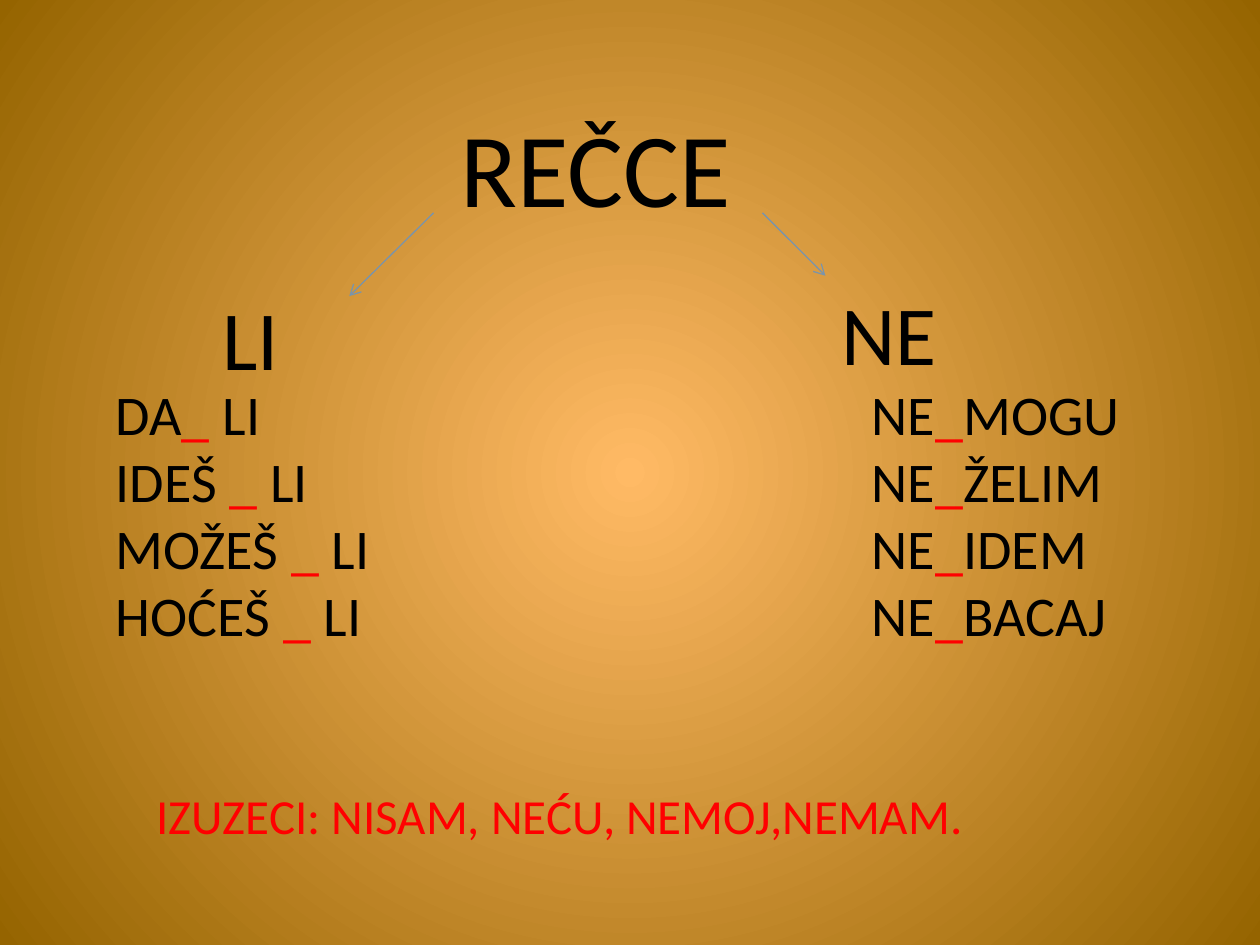
import pptx
import pptx.dml.color
import pptx.enum.shapes
import pptx.enum.text
import pptx.oxml
import pptx.oxml.ns
import pptx.util
from dataclasses import dataclass

Cm = pptx.util.Cm
RGB = pptx.dml.color.RGBColor.from_string
ALIGN = pptx.enum.text.PP_ALIGN


@dataclass(frozen=True)
class Theme:
    font: str = "Calibri"
    text: str = "000000"
    accent: str = "FF0000"
    arrow: str = "7A94AA"
    glow: str = "FFBA65"
    edge: str = "956400"
    title: int = 60
    heading: int = 48
    words: int = 32
    note: int = 28


THEME = Theme()
LI_WORDS = [("DA", "_", " LI"), ("IDEŠ ", "_ ", "LI"),
            ("MOŽEŠ ", "_ ", "LI"), ("HOĆEŠ ", "_ ", "LI")]
NE_WORDS = [("NE", "_", verb) for verb in ("MOGU", "ŽELIM", "IDEM", "BACAJ")]


def add_xml(parent, xml):
    tag, rest = xml.split(" ", 1)
    ns = pptx.oxml.ns.nsdecls("a")
    parent.append(pptx.oxml.parse_xml(f"<a:{tag} {ns} {rest}"))


def place(sp, box):
    for name, value in zip(("left", "top", "width", "height"), box):
        setattr(sp, name, Cm(value))


def add_run(p, text, size, color):
    r = p.add_run()
    r.text = text
    for name, value in {"name": THEME.font, "size": pptx.util.Pt(size)}.items():
        setattr(r.font, name, value)
    r.font.color.rgb = RGB(color)


def format_frame(tf):
    values = {
        "word_wrap": True,
        "auto_size": pptx.enum.text.MSO_AUTO_SIZE.NONE,
        "vertical_anchor": pptx.enum.text.MSO_ANCHOR.TOP,
    }
    for name, value in values.items():
        setattr(tf, name, value)


def set_background(s):
    """Fill the slide with a gradient that runs from its centre outwards."""
    fill = s.background.fill
    fill.gradient()
    for stop, color, pos in zip(fill.gradient_stops, (THEME.glow, THEME.edge), (0, 1)):
        stop.color.rgb = RGB(color)
        stop.position = pos
    grad = next(s.element.iter(pptx.oxml.ns.qn("a:gradFill")))
    grad.remove(grad.find(pptx.oxml.ns.qn("a:lin")))
    add_xml(grad, 'path path="circle"><a:fillToRect l="50000" t="50000" '
                  'r="50000" b="50000"/></a:path>')


def set_title(s, box, text):
    sp = s.shapes.title
    place(sp, box)
    format_frame(sp.text_frame)
    p = sp.text_frame.paragraphs[0]
    p.alignment = ALIGN.CENTER
    add_run(p, text, THEME.title, THEME.text)


def add_label(s, box, text, size, color):
    sp = s.shapes.add_textbox(*map(Cm, box))
    format_frame(sp.text_frame)
    add_run(sp.text_frame.paragraphs[0], text, size, color)


def add_arrow(s, start, end):
    line = s.shapes.add_connector(
        pptx.enum.shapes.MSO_CONNECTOR.STRAIGHT, *map(Cm, start + end))
    line.line.color.rgb = RGB(THEME.arrow)
    line.line.width = pptx.util.Pt(0.75)
    ln = line.element.spPr.find(pptx.oxml.ns.qn("a:ln"))
    add_xml(ln, 'tailEnd type="arrow"/>')
    add_xml(line.element.spPr, "effectLst />")


def fill_word_list(sp, box, words):
    """List the examples without bullets, each gap mark in the accent colour."""
    place(sp, box)
    tf = sp.text_frame
    format_frame(tf)
    for i, parts in enumerate(words):
        p = tf.paragraphs[0] if i == 0 else tf.add_paragraph()
        p.alignment = ALIGN.LEFT
        p.space_before = pptx.util.Pt(0)
        pPr = p._p.get_or_add_pPr()
        for name in ("marL", "indent"):
            pPr.set(name, "0")
        add_xml(pPr, "buNone />")
        for text, color in zip(parts, (THEME.text, THEME.accent, THEME.text)):
            add_run(p, text, THEME.words, color)


def main():
    prs = pptx.Presentation()
    prs.slide_width, prs.slide_height = Cm(25.4), Cm(19.05)
    s = prs.slides.add_slide(prs.slide_layouts.get_by_name("Two Content"))
    set_background(s)
    set_title(s, (2.9, 1.93, 18.21, 2.82), "REČCE")
    add_arrow(s, (8.74, 4.29), (7.04, 5.97))
    add_arrow(s, (15.37, 4.29), (16.64, 5.56))
    add_label(s, (4.24, 5.66, 2.79, 2.31), "LI", THEME.heading, THEME.text)
    add_label(s, (16.71, 5.56, 2.59, 2.31), "NE", THEME.heading, THEME.text)
    fill_word_list(s.placeholders[1], (2.08, 7.52, 15.24, 5.74), LI_WORDS)
    fill_word_list(s.placeholders[2], (17.32, 7.52, 5.56, 5.74), NE_WORDS)
    add_label(s, (2.9, 15.72, 20.4, 1.45), "IZUZECI: NISAM, NEĆU, NEMOJ,NEMAM.",
              THEME.note, THEME.accent)
    prs.save("out.pptx")


if __name__ == "__main__":
    main()
